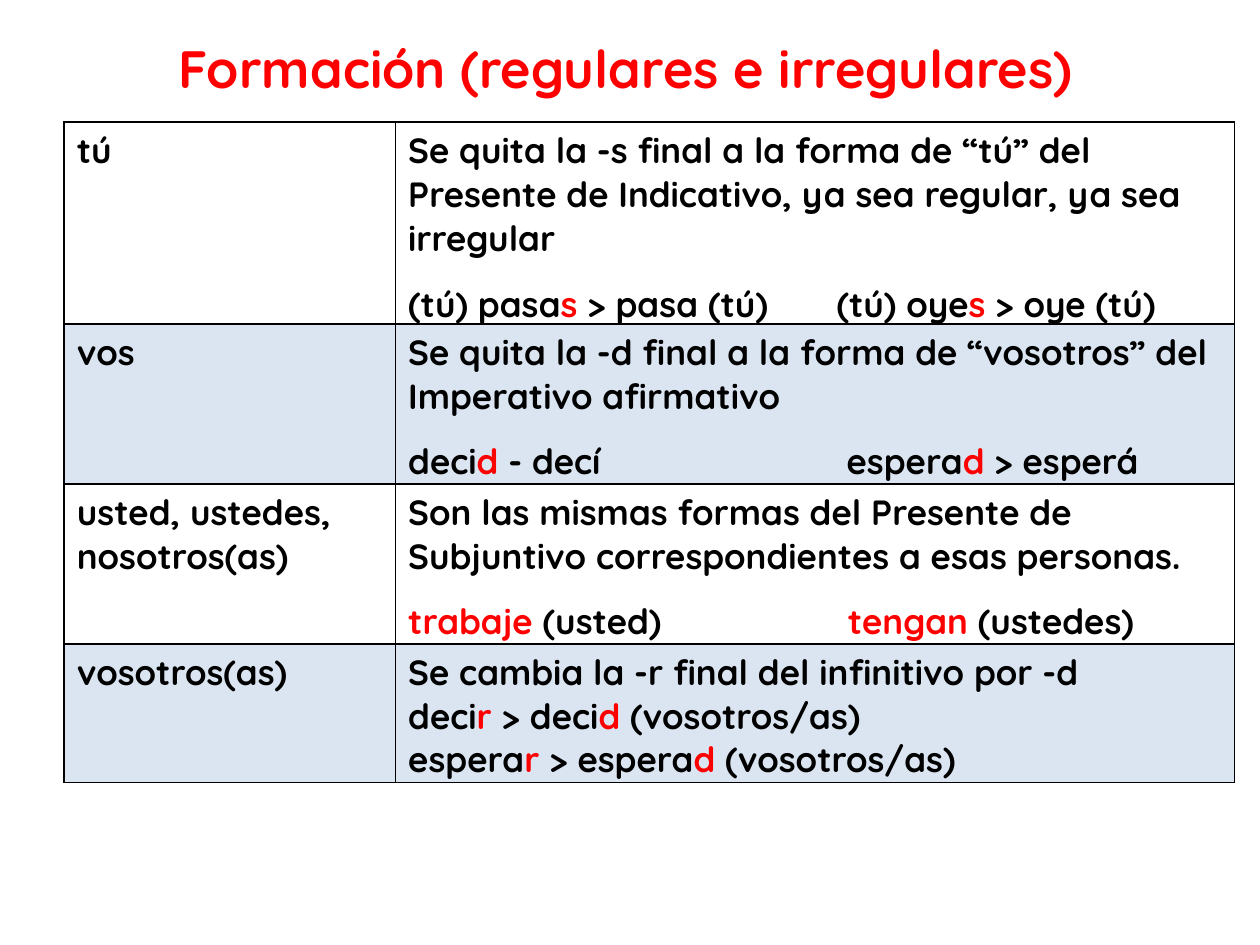
from dataclasses import dataclass

from lxml import etree
from pptx import Presentation
from pptx.dml.color import RGBColor
from pptx.enum.text import MSO_ANCHOR, MSO_AUTO_SIZE, PP_ALIGN
from pptx.oxml.ns import qn
from pptx.util import Inches, Pt

CENTER = PP_ALIGN.CENTER
MIDDLE = MSO_ANCHOR.MIDDLE
TOP = MSO_ANCHOR.TOP
FIT_SHAPE = MSO_AUTO_SIZE.SHAPE_TO_FIT_TEXT
TITLE_ONLY = 5


@dataclass(frozen=True)
class Theme:
    font: str = "Quicksand"
    title_size: int = 30
    body_size: int = 20
    example_gap: float = 12.5
    text: str = "000000"
    accent: str = "FF0000"
    band: str = "4F81BD"
    band_opacity: int = 20
    border: str = "000000"
    border_width: int = 1


THEME = Theme()
TITLE = "Formación (regulares e irregulares)"
COLUMN_WIDTHS = (2.63, 6.66)

# Person, row height, rule, examples, tab stop and space before the examples.
# Text between bars is shown in the accent colour.
RULES = [
    ("tú", 1.6,
     "Se quita la -s final a la forma de “tú” del Presente de Indicativo, "
     "ya sea regular, ya sea irregular",
     ["(tú) pasa|s| > pasa (tú)\t(tú) oye|s| > oye (tú)"], 3.4, THEME.example_gap),
    ("vos", 1.27,
     "Se quita la -d final a la forma de “vosotros” del Imperativo afirmativo",
     ["deci|d |- decí\tespera|d| > esperá"], 3.48, THEME.example_gap),
    ("usted, ustedes, nosotros(as)", 1.27,
     "Son las mismas formas del Presente de Subjuntivo correspondientes a esas personas.",
     ["|trabaje |(usted)\t|tengan |(ustedes)"], 3.49, THEME.example_gap),
    ("vosotros(as)", 1.1,
     "Se cambia la -r final del infinitivo por -d",
     ["deci|r| > deci|d| (vosotros/as)", "espera|r| > espera|d| (vosotros/as)"], None, 0),
]


def apply_format(target, values):
    for name, value in values.items():
        setattr(target, name, value)


def add_marked_text(paragraph, marked, size, colors):
    """Write runs, switching between the two colours at each bar."""
    for index, words in enumerate(marked.split("|")):
        if words:
            run = paragraph.add_run()
            run.text = words
            apply_format(run.font, {"name": THEME.font, "size": Pt(size), "bold": True})
            run.font.color.rgb = RGBColor.from_string(colors[index % 2])


def add_tab_stop(paragraph, position):
    stops = etree.SubElement(paragraph._p.get_or_add_pPr(), qn("a:tabLst"))
    etree.SubElement(stops, qn("a:tab"), pos=str(Inches(position)), algn="l")


def add_borders(cell):
    properties = cell._tc.get_or_add_tcPr()
    for side in ("a:lnL", "a:lnR", "a:lnT", "a:lnB"):
        line = etree.SubElement(properties, qn(side), w=str(Pt(THEME.border_width)))
        fill = etree.SubElement(line, qn("a:solidFill"))
        etree.SubElement(fill, qn("a:srgbClr"), val=THEME.border)


def fill_cell(cell, banded):
    if not banded:
        cell.fill.background()
        return
    cell.fill.solid()
    cell.fill.fore_color.rgb = RGBColor.from_string(THEME.band)
    color = cell._tc.tcPr.find(qn("a:solidFill")).find(qn("a:srgbClr"))
    etree.SubElement(color, qn("a:alpha"), val=str(THEME.band_opacity * 1000))


def place_title(slide, left, top, width, height):
    title = slide.shapes.title
    apply_format(title, {"left": Inches(left), "top": Inches(top),
                         "width": Inches(width), "height": Inches(height)})
    frame = title.text_frame
    apply_format(frame, {"word_wrap": True, "auto_size": FIT_SHAPE,
                         "vertical_anchor": MIDDLE})
    heading = frame.paragraphs[0]
    heading.alignment = CENTER
    add_marked_text(heading, TITLE, THEME.title_size, (THEME.accent, THEME.accent))


def place_rules_table(slide, left, top, width, height):
    table = slide.shapes.add_table(
        len(RULES), len(COLUMN_WIDTHS),
        Inches(left), Inches(top), Inches(width), Inches(height)).table
    apply_format(table, {"first_row": False, "horz_banding": False})
    for column, column_width in zip(table.columns, COLUMN_WIDTHS):
        column.width = Inches(column_width)

    colors = (THEME.text, THEME.accent)
    for index, (person, row_height, rule, examples, tab, gap) in enumerate(RULES):
        table.rows[index].height = Inches(row_height)
        person_cell, rule_cell = table.rows[index].cells
        for cell, words in ((person_cell, person), (rule_cell, rule)):
            apply_format(cell, {"margin_left": Inches(0.1), "margin_right": Inches(0.1),
                                "margin_top": Inches(0.05), "margin_bottom": 0,
                                "vertical_anchor": TOP})
            add_borders(cell)
            fill_cell(cell, banded=index % 2 == 1)
            add_marked_text(cell.text_frame.paragraphs[0], words, THEME.body_size, colors)

        # Examples below the rule
        for example in examples:
            paragraph = rule_cell.text_frame.add_paragraph()
            if tab:
                add_tab_stop(paragraph, tab)
            paragraph.space_before = Pt(gap)
            add_marked_text(paragraph, example, THEME.body_size, colors)


def main():
    deck = Presentation()
    apply_format(deck, {"slide_width": Inches(10), "slide_height": Inches(7.5)})
    slide = deck.slides.add_slide(deck.slide_layouts[TITLE_ONLY])
    place_title(slide, 0.28, 0.23, 9.37, 0.61)
    place_rules_table(slide, 0.51, 0.97, sum(COLUMN_WIDTHS), sum(row[1] for row in RULES))
    deck.save("out.pptx")


if __name__ == "__main__":
    main()
